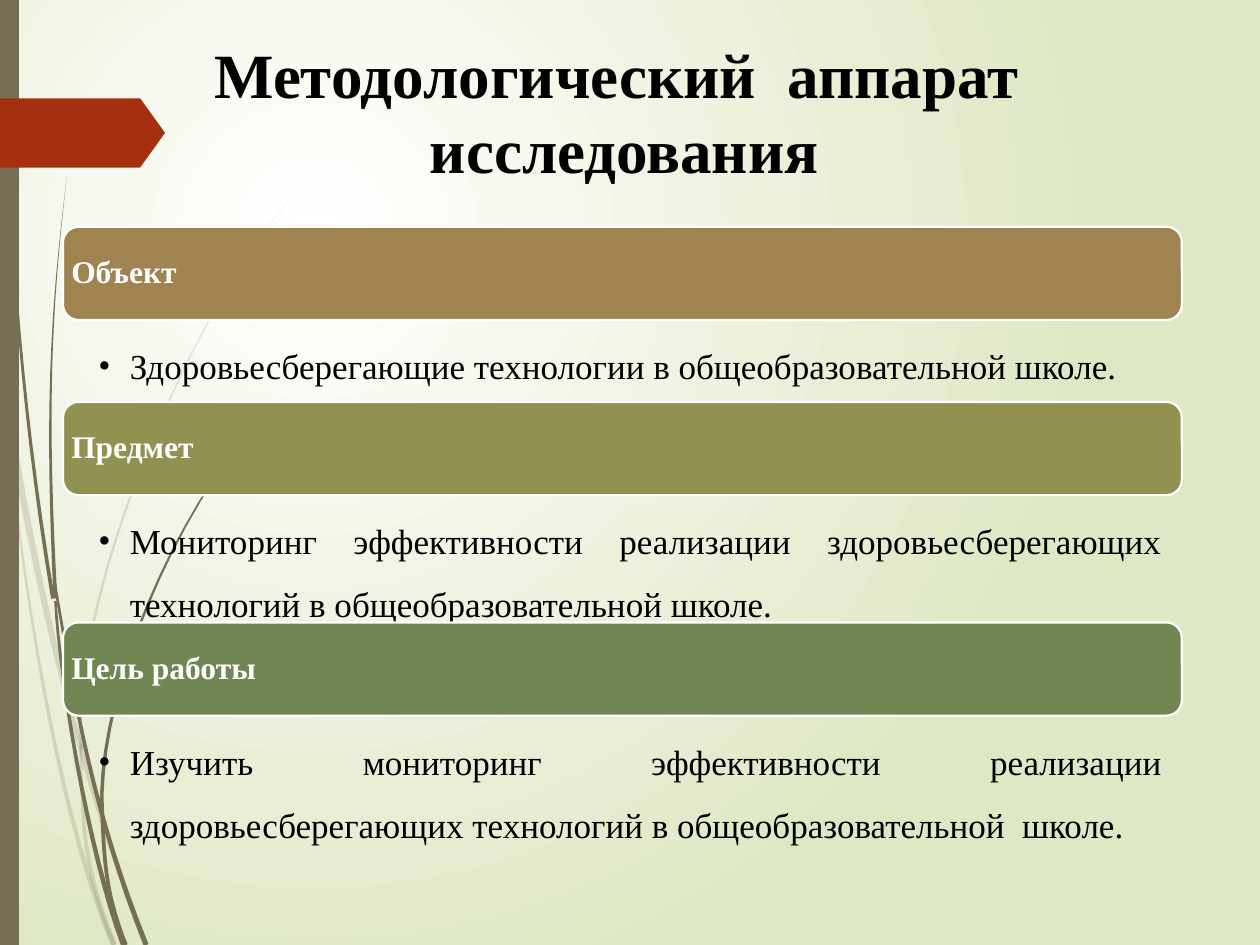
from dataclasses import dataclass
from math import hypot

from pptx import Presentation
from pptx.dml.color import RGBColor
from pptx.enum.shapes import MSO_SHAPE as Shape
from pptx.enum.text import MSO_ANCHOR as Anchor, PP_ALIGN as Align
from pptx.oxml import parse_xml
from pptx.oxml.ns import nsdecls, qn
from pptx.util import Inches, Pt

FONT = "Times New Roman"
EARTH, RUST, WHITE, BLACK = "766F54", "A53010", "FFFFFF", "000000"
LEFT, WIDTH, BAR_H, SECTIONS_TOP = 0.5, 8.88, 0.74, 1.8
STEPS = 16


@dataclass
class Wisp:
    """A tapered grass blade passing through four points a third of its way apart."""
    points: tuple
    start_width: float
    end_width: float
    alpha: int = 100


@dataclass
class Section:
    """A coloured heading bar and the statement below it."""
    color: str
    heading: str
    body: str
    body_height: float


WISPS = (
    Wisp(((0, 2.9), (0.28, 4.44), (0.65, 5.97), (1.15, 7.5)), 0.06, 0.03, alpha=20),
    Wisp(((0.08, 3.5), (0.22, 4.7), (0.5, 6.2), (0.9, 7.5)), 0.01, 0.04, alpha=20),
    Wisp(((0.64, 5.9), (0.66, 6.46), (0.73, 6.95), (0.91, 7.5)), 0.02, 0.04, alpha=20),
    Wisp(((0.65, 5.95), (0.82, 4.62), (1.45, 2.95), (2.34, 1.53)), 0.03, 0, alpha=20),
    Wisp(((0.03, 0), (0.08, 1.57), (0.2, 3.13), (0.42, 4.75)), 0.01, 0.03),
    Wisp(((0.43, 4.6), (0.6, 5.56), (0.82, 6.5), (1.16, 7.5)), 0.02, 0.04),
    Wisp(((0.44, 4.77), (0.53, 5.57), (0.72, 6.59), (0.98, 7.5)), 0.02, 0.04),
    Wisp(((0.53, 1.41), (0.43, 2.45), (0.4, 3.49), (0.44, 4.75)), 0, 0.03),
    Wisp(((0.81, 6.45), (0.93, 5.52), (1.33, 4.45), (1.96, 3.44)), 0.03, 0.01),
    Wisp(((0.81, 6.41), (0.83, 6.78), (0.88, 7.12), (1, 7.5)), 0.03, 0.03),
)
SECTIONS = (
    Section("9F8351", "Объект",
            "Здоровьесберегающие технологии в общеобразовательной школе.", 0.65),
    Section("919252", "Предмет",
            "Мониторинг эффективности реализации здоровьесберегающих технологий "
            "в общеобразовательной школе.", 1.01),
    Section("728653", "Цель работы",
            "Изучить мониторинг эффективности реализации здоровьесберегающих технологий "
            "в общеобразовательной  школе.", 1.01),
)


def rgb(color: str) -> RGBColor:
    """Turn a hex string into a colour."""
    return RGBColor.from_string(color)


def paint(sp, color: str, line: str = "", alpha: int = 100) -> None:
    """Give a shape a flat fill, an optional outline and no shadow."""
    sp.shadow.inherit = False
    sp.fill.solid()
    sp.fill.fore_color.rgb = rgb(color)
    if alpha < 100:
        clr = sp.element.spPr.find(".//" + qn("a:srgbClr"))
        clr.append(parse_xml(f'<a:alpha {nsdecls("a")} val="{alpha * 1000}"/>'))
    if line:
        sp.line.color.rgb = rgb(line)
        sp.line.width = Pt(1.25)
    else:
        sp.line.fill.background()


def point_at(points: tuple, t: float) -> tuple[float, float]:
    """Find the point at t on the cubic curve through four evenly spaced points."""
    u = 3 * t
    weights = ((1 - u) * (2 - u) * (3 - u) / 6, u * (2 - u) * (3 - u) / 2,
               u * (u - 1) * (3 - u) / 2, u * (u - 1) * (u - 2) / 6)
    x, y = (sum(w * c for w, c in zip(weights, axis)) for axis in zip(*points))
    return x, y


def add_wisp(s, wisp: Wisp) -> None:
    """Draw a blade by offsetting its centre curve to both sides."""
    centre = [point_at(wisp.points, i / STEPS) for i in range(STEPS + 1)]
    left, right = [], []
    for i, (x, y) in enumerate(centre):
        (x0, y0), (x1, y1) = centre[max(i - 1, 0)], centre[min(i + 1, STEPS)]
        half = (wisp.start_width + (wisp.end_width - wisp.start_width) * i / STEPS) / 2
        scale = half / hypot(x1 - x0, y1 - y0)
        dx, dy = (y1 - y0) * scale, (x0 - x1) * scale
        left.append((Inches(x + dx), Inches(y + dy)))
        right.append((Inches(x - dx), Inches(y - dy)))
    first, *rest = left + right[::-1]
    builder = s.shapes.build_freeform(*first)
    builder.add_line_segments(rest, close=True)
    paint(builder.convert_to_shape(), EARTH, alpha=wisp.alpha)


def add_block(s, kind, left: float, top: float, width: float, height: float, color: str,
              line: str = ""):
    """Add a painted preset shape."""
    sp = s.shapes.add_shape(kind, *map(Inches, (left, top, width, height)))
    paint(sp, color, line)
    return sp


def write(sp, text: str, *, size: int, color: str = BLACK, bold: bool = False,
          align=Align.LEFT, anchor=Anchor.TOP, spacing: float = 1.0,
          insets: tuple = (0.1, 0.05, 0.1, 0.05), hang: float = 0) -> None:
    """Write one formatted paragraph, bulleted when it has a hanging indent."""
    tf = sp.text_frame
    tf.word_wrap = True
    tf.vertical_anchor = anchor
    tf.margin_left, tf.margin_top, tf.margin_right, tf.margin_bottom = map(Inches, insets)
    p = tf.paragraphs[0]
    p.alignment, p.line_spacing = align, spacing
    if hang:
        pPr = p._p.get_or_add_pPr()
        pPr.set("marL", str(Inches(hang)))
        pPr.set("indent", str(-Inches(hang)))
        pPr.append(parse_xml(f'<a:buFont {nsdecls("a")} typeface="{FONT}"/>'))
        pPr.append(parse_xml(f'<a:buChar {nsdecls("a")} char="•"/>'))
    r = p.add_run()
    r.text = text
    r.font.name, r.font.size, r.font.bold = FONT, Pt(size), bold
    r.font.color.rgb = rgb(color)


def add_text(s, left: float, top: float, width: float, height: float, text: str, **fmt) -> None:
    """Add a text box with one paragraph."""
    write(s.shapes.add_textbox(*map(Inches, (left, top, width, height))), text, **fmt)


def add_section(s, section: Section, top: float) -> float:
    """Draw a heading bar with its statement and return the top of the next section."""
    bar = add_block(s, Shape.ROUNDED_RECTANGLE, LEFT, top, WIDTH, BAR_H, section.color, WHITE)
    write(bar, section.heading, size=18, color=WHITE, bold=True, anchor=Anchor.MIDDLE,
          spacing=0.9, insets=(0.03, 0.07, 0.07, 0.07))
    add_text(s, LEFT, top + BAR_H, WIDTH, section.body_height, section.body, size=20,
             align=Align.JUSTIFY, spacing=1.5, insets=(0.28, 0.03, 0.16, 0.03), hang=0.25)
    return top + BAR_H + section.body_height


def set_background(s) -> None:
    """Fill the background with a radial gradient."""
    s.element.cSld.insert(0, parse_xml(
        f'<p:bg {nsdecls("p", "a")}><p:bgPr><a:gradFill rotWithShape="1"><a:gsLst>'
        '<a:gs pos="0"><a:srgbClr val="FFFFFF"/></a:gs>'
        '<a:gs pos="100000"><a:srgbClr val="DFE8C4"/></a:gs></a:gsLst>'
        '<a:path path="circle"><a:fillToRect l="50000" t="50000" r="100000" b="100000"/>'
        '</a:path></a:gradFill><a:effectLst/></p:bgPr></p:bg>'))


def main() -> None:
    """Build and save the slide."""
    prs = Presentation()
    prs.slide_width, prs.slide_height = Inches(10), Inches(7.5)
    s = prs.slides.add_slide(prs.slide_layouts[6])
    set_background(s)
    for wisp in WISPS:
        add_wisp(s, wisp)
    add_block(s, Shape.RECTANGLE, 0, 0, 0.15, 7.5, EARTH)
    banner = add_block(s, Shape.PENTAGON, 0, 0.78, 1.31, 0.55, RUST)
    banner.adjustments[0] = 0.36
    add_text(s, 0.55, 0.23, 8.81, 1.4, "Методологический  аппарат  исследования",
             size=36, bold=True, align=Align.CENTER)
    top = SECTIONS_TOP
    for section in SECTIONS:
        top = add_section(s, section, top)
    prs.save("out.pptx")


if __name__ == "__main__":
    main()
